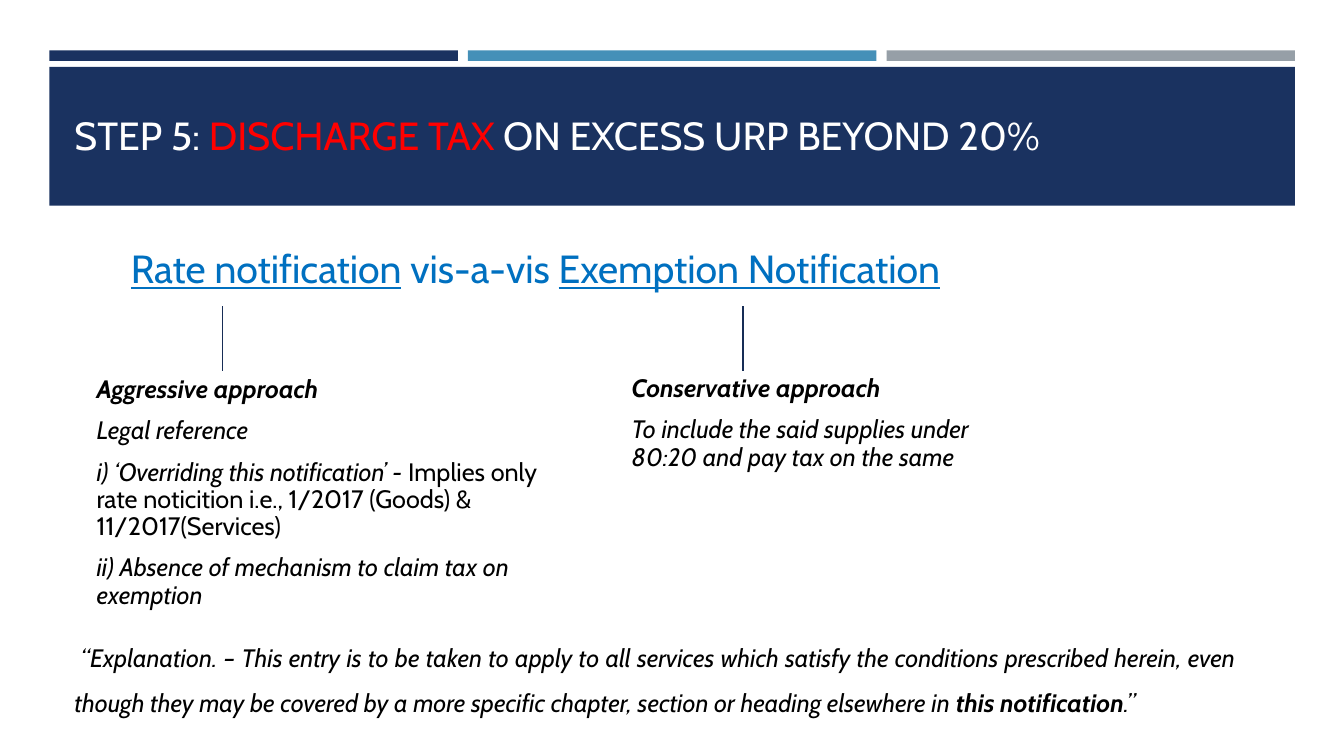
from dataclasses import dataclass

from lxml.etree import SubElement
from pptx import Presentation
from pptx.dml.color import RGBColor
from pptx.enum.shapes import MSO_CONNECTOR as Connector
from pptx.enum.shapes import MSO_SHAPE as Shape
from pptx.enum.text import MSO_ANCHOR as Anchor
from pptx.enum.text import PP_ALIGN as Align
from pptx.oxml.ns import qn
from pptx.slide import Slide
from pptx.util import Pt

NAVY = RGBColor(0x1A, 0x32, 0x60)
DARK_NAVY = RGBColor(0x17, 0x2D, 0x56)
STEEL = RGBColor(0x45, 0x90, 0xB8)
GRAY = RGBColor(0x96, 0x9F, 0xA7)
BLUE = RGBColor(0x00, 0x70, 0xC0)
RED = RGBColor(0xFF, 0x00, 0x00)
WHITE = RGBColor(0xFF, 0xFF, 0xFF)
BLACK = RGBColor(0x00, 0x00, 0x00)

FONT = "Cabin"
BAND_LEFT, BAND_WIDTH = 35.3, 889.7
BAR_GAP = 7.2


@dataclass(frozen=True)
class Span:
    text: str
    color: RGBColor = BLACK
    bold: bool = False
    italic: bool = False
    underline: bool = False


@dataclass(frozen=True)
class TextBlock:
    left: float
    top: float
    width: float
    height: float
    paragraphs: list[list[Span]]
    size: float = 18
    line_spacing: float = 0.9
    space_before: float = 10
    align: Align = Align.LEFT
    anchor: Anchor = Anchor.TOP
    inset: float = 3.6


TITLE = TextBlock(46.1, 57.6, 868.3, 77.8, [[
    Span("STEP 5: ", WHITE),
    Span("DISCHARGE TAX", RED),
    Span(" ON EXCESS URP BEYOND 20%", WHITE),
]], size=28, line_spacing=1, anchor=Anchor.MIDDLE)

HEADING = TextBlock(86.4, 171.4, 828, 55.4, [[
    Span("Rate notification", BLUE, underline=True),
    Span(" vis-a-vis ", BLUE),
    Span("Exemption Notification", BLUE, underline=True),
]], size=28, inset=7.2)

AGGRESSIVE = TextBlock(61.9, 265.7, 344.2, 175, [
    [Span("Aggressive approach", bold=True, italic=True)],
    [Span("Legal reference", italic=True)],
    [Span("i) ‘Overriding this notification’ - ", italic=True),
     Span("Implies only rate noticition i.e., 1/2017 (Goods) & 11/2017(Services)")],
    [Span("ii) Absence of mechanism to claim tax on exemption", italic=True)],
])

CONSERVATIVE = TextBlock(444.2, 265, 275.8, 76.3, [
    [Span("Conservative approach", bold=True, italic=True)],
    [Span("To include the said supplies under 80:20 and pay tax on the same",
          italic=True)],
])

EXPLANATION = TextBlock(46.1, 444.2, 843.8, 69.1, [[
    Span(" “Explanation. – This entry is to be taken to apply to all services "
         "which satisfy the conditions prescribed herein, even though they may "
         "be covered by a more specific chapter, section or heading elsewhere in ",
         italic=True),
    Span("this notification", bold=True, italic=True),
    Span(".”", italic=True),
]], line_spacing=1.5, align=Align.JUSTIFY)


def add_bar(page: Slide, left: float, top: float, width: float, height: float,
            color: RGBColor) -> None:
    bar = page.shapes.add_shape(Shape.RECTANGLE, Pt(left), Pt(top),
                                Pt(width), Pt(height))
    bar.shadow.inherit = False
    bar.fill.solid()
    bar.fill.fore_color.rgb = color
    bar.line.fill.background()


def add_text(page: Slide, block: TextBlock) -> None:
    box = page.shapes.add_textbox(Pt(block.left), Pt(block.top),
                                  Pt(block.width), Pt(block.height))
    frame = box.text_frame
    frame.word_wrap = True
    frame.vertical_anchor = block.anchor
    frame.margin_left = frame.margin_right = Pt(7.2)
    frame.margin_top = frame.margin_bottom = Pt(block.inset)
    for index, spans in enumerate(block.paragraphs):
        para = frame.add_paragraph() if index else frame.paragraphs[0]
        para.alignment = block.align
        para.line_spacing = block.line_spacing
        para.space_before = Pt(block.space_before if index else 0)
        for span in spans:
            run = para.add_run()
            run.text = span.text
            run.font.name = FONT
            run.font.size = Pt(block.size)
            run.font.color.rgb = span.color
            run.font.bold = span.bold
            run.font.italic = span.italic
            run.font.underline = span.underline


def add_vertical_line(page: Slide, x: float, top: float, bottom: float) -> None:
    line = page.shapes.add_connector(Connector.STRAIGHT, Pt(x), Pt(top),
                                     Pt(x), Pt(bottom))
    line.line.color.rgb = DARK_NAVY
    line.line.width = Pt(1)
    SubElement(line.element.spPr, qn("a:effectLst"))


def main() -> None:
    deck = Presentation()
    deck.slide_width, deck.slide_height = Pt(960), Pt(540)
    page = deck.slides.add_slide(deck.slide_layouts[6])

    bar_colors = (NAVY, STEEL, GRAY)
    bar_width = (BAND_WIDTH - 2 * BAR_GAP) / 3
    for column, color in enumerate(bar_colors):
        add_bar(page, BAND_LEFT + column * (bar_width + BAR_GAP), 36,
                bar_width, 7.5, color)
    add_bar(page, BAND_LEFT, 47.7, BAND_WIDTH, 99.2, NAVY)

    for block in (TITLE, EXPLANATION, HEADING, CONSERVATIVE, AGGRESSIVE):
        add_text(page, block)
    for x in (159.1, 530.6):
        add_vertical_line(page, x, 218.9, 265)

    deck.save("out.pptx")


if __name__ == "__main__":
    main()
